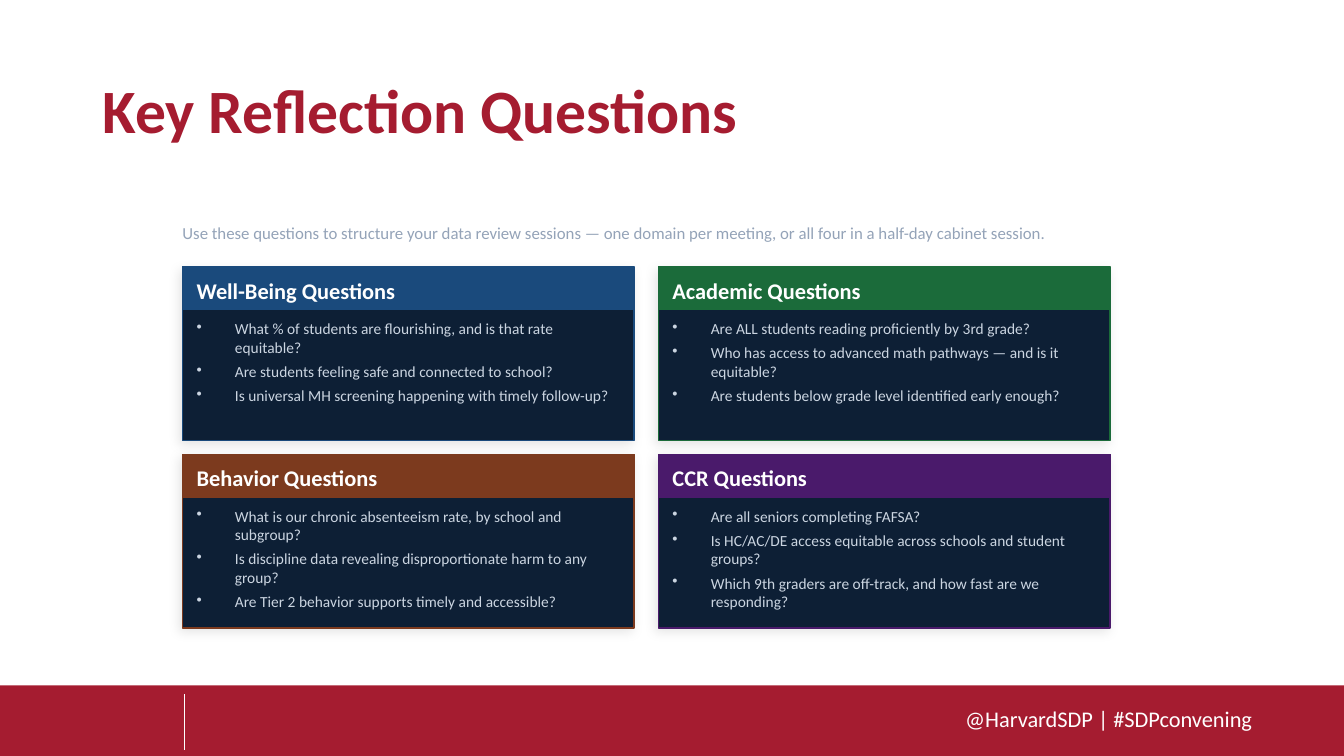
from dataclasses import dataclass

from lxml import etree
from pptx import Presentation
from pptx.dml.color import RGBColor
from pptx.enum.shapes import MSO_CONNECTOR, MSO_SHAPE
from pptx.enum.text import MSO_ANCHOR, PP_ALIGN
from pptx.oxml.ns import qn
from pptx.shapes.autoshape import Shape
from pptx.slide import Slide
from pptx.text.text import _Paragraph as Paragraph
from pptx.util import Inches, Pt

RECTANGLE = MSO_SHAPE.RECTANGLE
STRAIGHT = MSO_CONNECTOR.STRAIGHT
TOP, MIDDLE = MSO_ANCHOR.TOP, MSO_ANCHOR.MIDDLE
LEFT, RIGHT = PP_ALIGN.LEFT, PP_ALIGN.RIGHT


@dataclass(frozen=True)
class Theme:
    font: str = "Calibri"
    crimson: str = "A51C30"
    white: str = "FFFFFF"
    navy: str = "0D1F35"
    muted: str = "94A3B8"
    body: str = "CBD5E1"
    shadow: str = "000000"
    title_size: float = 44
    heading_size: float = 16
    intro_size: float = 12
    question_size: float = 11


@dataclass(frozen=True)
class Box:
    left: float
    top: float
    width: float
    height: float

    def lengths(self) -> tuple[Inches, Inches, Inches, Inches]:
        return Inches(self.left), Inches(self.top), Inches(self.width), Inches(self.height)


@dataclass(frozen=True)
class TextStyle:
    size: float
    color: str
    bold: bool = False
    anchor: MSO_ANCHOR = MIDDLE
    align: PP_ALIGN = LEFT
    insets: tuple[float, float, float, float] = (0, 0, 0, 0)
    bulleted: bool = False
    line_spacing: float | None = None


@dataclass(frozen=True)
class Card:
    heading: str
    color: str
    questions: tuple[str, ...]


THEME = Theme()
TITLE = TextStyle(THEME.title_size, THEME.crimson, bold=True,
                  insets=(0.1, 0.05, 0.1, 0.05), line_spacing=0.9)
FOOTER = TextStyle(THEME.heading_size, THEME.white, anchor=TOP, align=RIGHT,
                   insets=(0.1, 0.05, 0, 0.05))
INTRO = TextStyle(THEME.intro_size, THEME.muted)
HEADING = TextStyle(THEME.heading_size, THEME.white, bold=True)
QUESTIONS = TextStyle(THEME.question_size, THEME.body, anchor=TOP, bulleted=True)

GRID_LEFT, GRID_TOP = 1.81, 2.65
CARD_WIDTH, CARD_HEIGHT = 4.48, 1.72
COLUMN_GAP, ROW_GAP = 0.24, 0.14
PADDING = 0.14
COLUMNS = 2

CARDS = (
    Card("Well-Being Questions", "1A4A7C", (
        "What % of students are flourishing, and is that rate equitable?",
        "Are students feeling safe and connected to school?",
        "Is universal MH screening happening with timely follow-up?",
    )),
    Card("Academic Questions", "1B6B3A", (
        "Are ALL students reading proficiently by 3rd grade?",
        "Who has access to advanced math pathways — and is it equitable?",
        "Are students below grade level identified early enough?",
    )),
    Card("Behavior Questions", "7C3A1E", (
        "What is our chronic absenteeism rate, by school and subgroup?",
        "Is discipline data revealing disproportionate harm to any group?",
        "Are Tier 2 behavior supports timely and accessible?",
    )),
    Card("CCR Questions", "4A1A6B", (
        "Are all seniors completing FAFSA?",
        "Is HC/AC/DE access equitable across schools and student groups?",
        "Which 9th graders are off-track, and how fast are we responding?",
    )),
)


def add_bullet(paragraph: Paragraph) -> None:
    properties = paragraph._p.get_or_add_pPr()
    properties.set("marL", str(Inches(0.38)))
    properties.set("indent", str(-Inches(0.38)))
    etree.SubElement(properties, qn("a:buChar"), char="•")
    paragraph.space_after = Pt(4)


def add_text(slide: Slide, box: Box, lines: tuple[str, ...], style: TextStyle) -> None:
    frame = slide.shapes.add_textbox(*box.lengths()).text_frame
    frame.word_wrap = True
    frame.vertical_anchor = style.anchor
    (frame.margin_left, frame.margin_top,
     frame.margin_right, frame.margin_bottom) = map(Inches, style.insets)
    for index, line in enumerate(lines):
        paragraph = frame.add_paragraph() if index else frame.paragraphs[0]
        paragraph.alignment = style.align
        if style.bulleted:
            add_bullet(paragraph)
        if style.line_spacing:
            paragraph.line_spacing = style.line_spacing
        run = paragraph.add_run()
        run.text = line
        run.font.name = THEME.font
        run.font.size = Pt(style.size)
        run.font.bold = style.bold
        run.font.color.rgb = RGBColor.from_string(style.color)


def add_rectangle(slide: Slide, box: Box, fill: str, outline: str | None = None) -> Shape:
    shape = slide.shapes.add_shape(RECTANGLE, *box.lengths())
    shape.shadow.inherit = False
    shape.fill.solid()
    shape.fill.fore_color.rgb = RGBColor.from_string(fill)
    if outline:
        shape.line.color.rgb = RGBColor.from_string(outline)
        shape.line.width = Pt(1)
    else:
        shape.line.fill.background()
    return shape


def add_soft_shadow(shape: Shape) -> None:
    effects = shape._element.spPr.find(qn("a:effectLst"))
    shadow = etree.SubElement(effects, qn("a:outerShdw"), blurRad=str(Pt(8)),
                              dist=str(Pt(3)), dir=str(135 * 60000),
                              algn="bl", rotWithShape="0")
    color = etree.SubElement(shadow, qn("a:srgbClr"), val=THEME.shadow)
    etree.SubElement(color, qn("a:alpha"), val="10000")


def add_card(slide: Slide, card: Card, left: float, top: float) -> None:
    panel = add_rectangle(slide, Box(left, top, CARD_WIDTH, CARD_HEIGHT), THEME.navy, card.color)
    add_soft_shadow(panel)
    add_rectangle(slide, Box(left, top, CARD_WIDTH, 0.42), card.color, card.color)
    text_left, text_width = left + PADDING, CARD_WIDTH - 2 * PADDING
    add_text(slide, Box(text_left, top + 0.1, text_width, 0.26), (card.heading,), HEADING)
    add_text(slide, Box(text_left, top + 0.52, text_width, 1.1), card.questions, QUESTIONS)


def add_footer(slide: Slide) -> None:
    add_rectangle(slide, Box(0, 6.8, 13.33, 0.7), THEME.crimson)
    add_text(slide, Box(8.39, 6.95, 4.03, 0.37), ("@HarvardSDP | #SDPconvening",), FOOTER)
    divider = slide.shapes.add_connector(STRAIGHT, Inches(1.83), Inches(6.89),
                                         Inches(1.83), Inches(7.44))
    divider.line.color.rgb = RGBColor.from_string(THEME.white)
    divider.line.width = Pt(0.5)
    etree.SubElement(divider._element.spPr, qn("a:effectLst"))


def main() -> None:
    presentation = Presentation()
    presentation.slide_width = Inches(13.33)
    presentation.slide_height = Inches(7.5)
    slide = presentation.slides.add_slide(presentation.slide_layouts[6])
    slide.background.fill.solid()
    slide.background.fill.fore_color.rgb = RGBColor.from_string(THEME.white)

    add_footer(slide)
    add_text(slide, Box(0.92, 0.4, 11.5, 1.45), ("Key Reflection Questions",), TITLE)
    add_text(slide, Box(GRID_LEFT, 2.17, 8.9, 0.28), (
        "Use these questions to structure your data review sessions — "
        "one domain per meeting, or all four in a half-day cabinet session.",
    ), INTRO)
    for index, card in enumerate(CARDS):
        row, column = divmod(index, COLUMNS)
        add_card(slide, card, GRID_LEFT + column * (CARD_WIDTH + COLUMN_GAP),
                 GRID_TOP + row * (CARD_HEIGHT + ROW_GAP))
    presentation.save("out.pptx")


if __name__ == "__main__":
    main()
